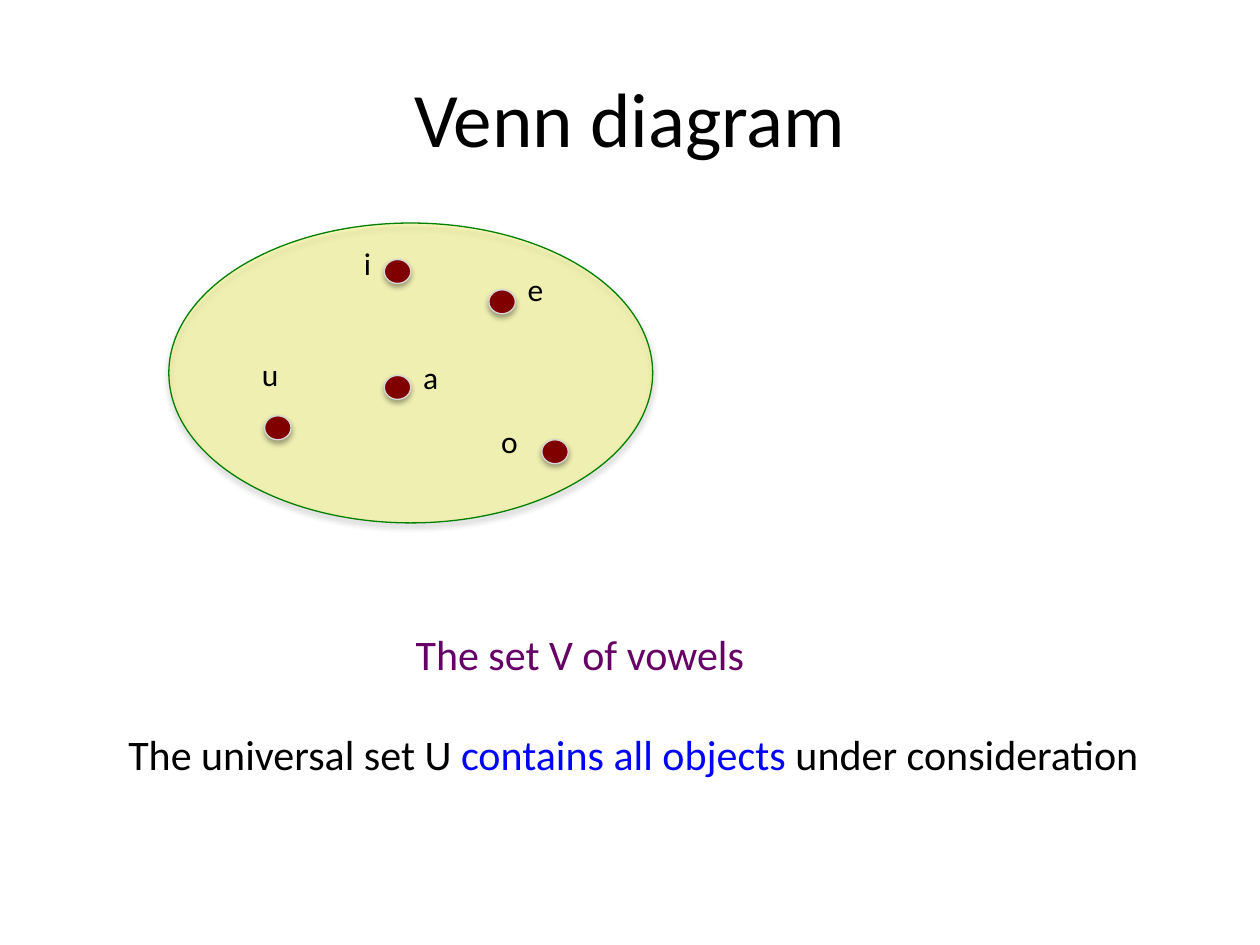
from lxml import etree
from pptx import Presentation
from pptx import util as u
from pptx.dml.color import RGBColor
from pptx.enum import shapes, text
from pptx.oxml import parse_xml
from pptx.oxml.ns import qn

NS = 'xmlns:a="http://schemas.openxmlformats.org/drawingml/2006/main"'
SHADOW = (f'<a:outerShdw {NS} blurRad="40000" dist="23000" dir="5400000" rotWithShape="0">'
          '<a:srgbClr val="000000"><a:alpha val="35000"/></a:srgbClr></a:outerShdw>')


def add_ellipse(x, y, w, h, fill, line):
    sp = s.shapes.add_shape(shapes.MSO_SHAPE.OVAL, u.Inches(x), u.Inches(y),
                            u.Inches(w), u.Inches(h))
    sp.fill.solid()
    sp.fill.fore_color.rgb = RGBColor.from_string(fill)
    sp.line.color.rgb = RGBColor.from_string(line)
    sp.line.width = u.Pt(0.75)
    sp.shadow.inherit = False
    sp._element.spPr.find(qn("a:effectLst")).append(parse_xml(SHADOW))
    return sp


def add_text(x, y, w, h, runs, size, wrap=False):
    tf = s.shapes.add_textbox(u.Inches(x), u.Inches(y), u.Inches(w), u.Inches(h)).text_frame
    tf.word_wrap = wrap
    for words, color in runs:
        r = tf.paragraphs[0].add_run()
        r.text = words
        r.font.name = "Calibri"
        r.font.size = u.Pt(size)
        r.font.color.rgb = RGBColor.from_string(color)
    return tf


prs = Presentation()
prs.slide_width, prs.slide_height = u.Inches(10), u.Inches(7.5)
s = prs.slides.add_slide(prs.slide_layouts[6])

# Title
tf = add_text(0.5, 0.3, 9, 1.25, [("Venn diagram", "000000")], 44, wrap=True)
tf.vertical_anchor = text.MSO_ANCHOR.MIDDLE
tf.paragraphs[0].alignment = text.PP_ALIGN.CENTER

# Set outline with a translucent fill
sp = add_ellipse(1.34, 1.77, 3.84, 2.38, "FFFF00", "008000")
color = sp._element.spPr.find(qn("a:solidFill"))[0]
etree.SubElement(color, qn("a:alpha")).set("val", "24000")

# Elements: vowel, dot position, label box
vowels = [
    ("a", (3.05, 2.98), (3.26, 2.79, 0.32, 0.4), False),
    ("u", (2.1, 3.3), (1.98, 2.77, 0.33, 0.4), False),
    ("o", (4.3, 3.49), (3.88, 3.3, 0.34, 0.4), False),
    ("e", (3.88, 2.3), (4.09, 2.09, 0.26, 0.71), True),
    ("i", (3.05, 2.06), (2.79, 1.89, 0.26, 0.4), True),
]
for vowel, dot, label, wrap in vowels:
    add_ellipse(*dot, 0.21, 0.19, "800000", "D8D8D8")
    add_text(*label, [(vowel, "000000")], 18, wrap)

# Captions
add_text(3.2, 4.94, 2.84, 0.5, [("The set V of vowels", "660066")], 24)
add_text(0.92, 5.73, 8.3, 0.5, [("The universal set U ", "000000"),
                                ("contains all objects ", "0000FF"),
                                ("under consideration", "000000")], 24)

prs.save("out.pptx")
